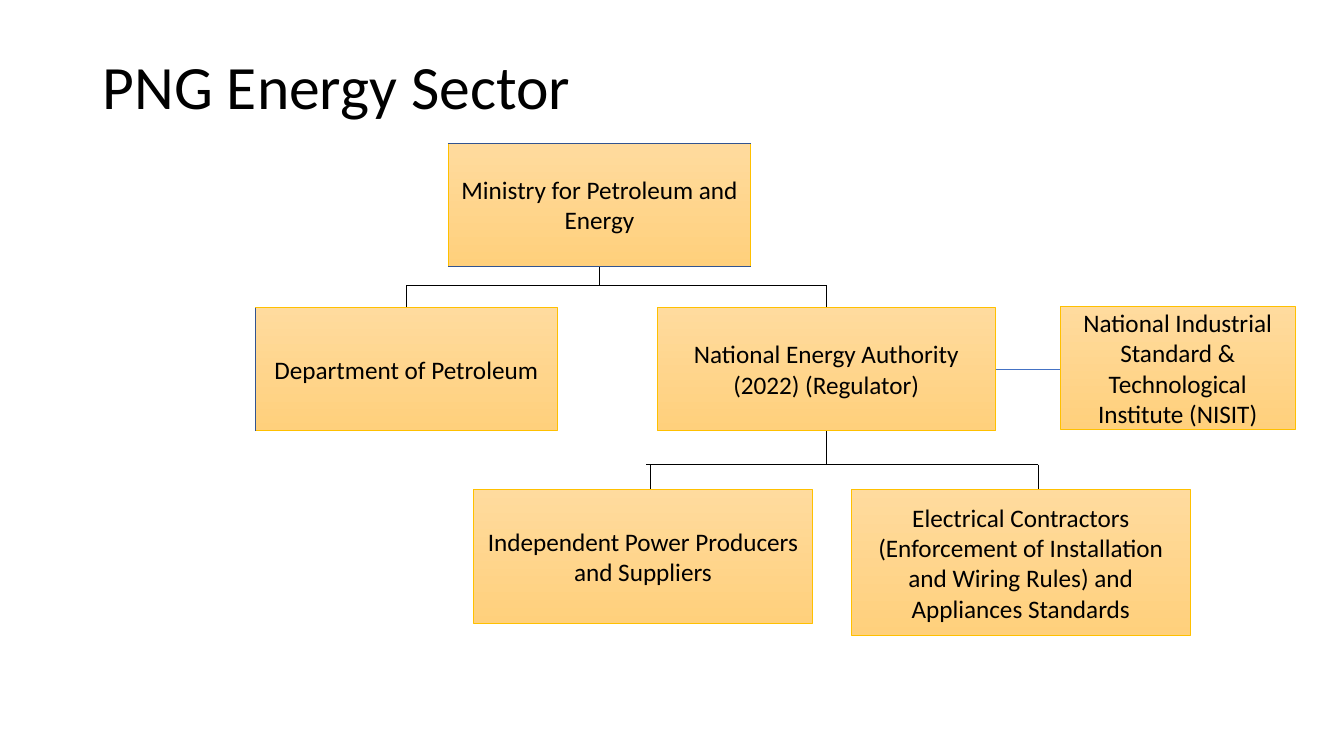
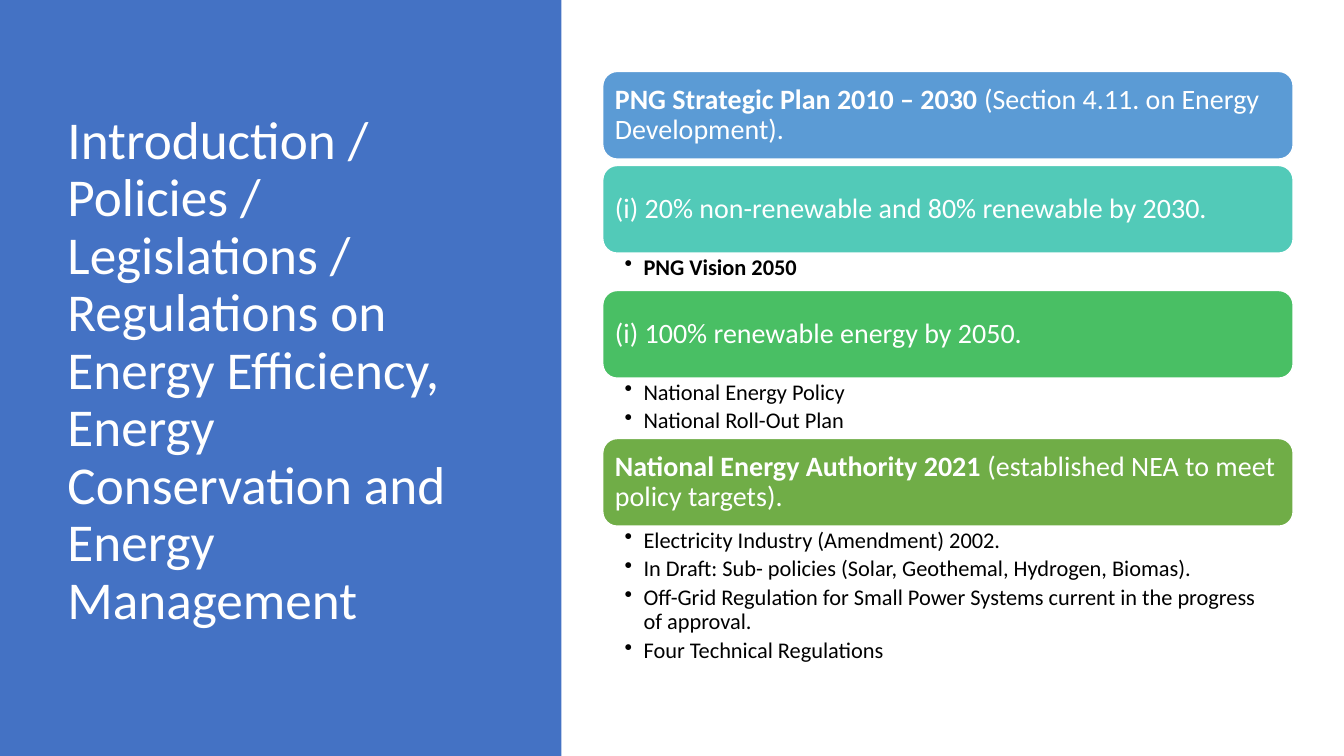
from lxml import etree
from pptx import Presentation
from pptx.dml.color import RGBColor
from pptx.enum.shapes import MSO_CONNECTOR, MSO_SHAPE
from pptx.enum.text import MSO_ANCHOR, PP_ALIGN
from pptx.oxml.ns import qn
from pptx.util import Cm, Pt

RECTANGLE, ROUNDED = MSO_SHAPE.RECTANGLE, MSO_SHAPE.ROUNDED_RECTANGLE
STRAIGHT = MSO_CONNECTOR.STRAIGHT
LEFT, CENTER = PP_ALIGN.LEFT, PP_ALIGN.CENTER
TOP, MIDDLE = MSO_ANCHOR.TOP, MSO_ANCHOR.MIDDLE

FONT = "Calibri"
BLACK, WHITE = "000000", "FFFFFF"
BLUE, DARK_BLUE, GOLD = "4472C4", "325491", "FFC000"
GOLD_FADE = ("FFDB9E", "FFD07C")

rgb = RGBColor.from_string


def write(shape, paragraphs, size, color, align=LEFT, anchor=MIDDLE, spacing=0.9):
    """Fill a shape with paragraphs, each a list of (text, bold) runs."""
    frame = shape.text_frame
    frame.word_wrap = True
    frame.vertical_anchor = anchor
    for index, spans in enumerate(paragraphs):
        para = frame.add_paragraph() if index else frame.paragraphs[0]
        para.alignment = align
        para.line_spacing = spacing
        for text, bold in spans:
            span = para.add_run()
            span.text = text
            span.font.name = FONT
            span.font.size = Pt(size)
            span.font.bold = bold
            span.font.color.rgb = rgb(color)
    return frame


def rule(page, x1, y1, x2, y2, color=BLACK, width=0.5):
    """Draw a straight line between two points given in centimetres."""
    line = page.shapes.add_connector(STRAIGHT, Cm(x1), Cm(y1), Cm(x2), Cm(y2))
    line.line.color.rgb = rgb(color)
    line.line.width = Pt(width)
    etree.SubElement(line._element.spPr, qn("a:effectLst"))


deck = Presentation()
deck.slide_width, deck.slide_height = Cm(33.87), Cm(19.05)
blank = deck.slide_layouts[6]

# Slide 1: organisation chart
page = deck.slides.add_slide(blank)
title = page.shapes.add_textbox(Cm(2.34), Cm(1.01), Cm(29.21), Cm(2.48))
write(title, [[("PNG Energy Sector", False)]], 44, BLACK)

# Connectors: top level to second level, then second level to third
for stem_x, top, bar_y, bottom, bar, drops in [
    (15.11, 6.71, 7.19, 7.75, (10.24, 20.83), (10.24, 20.83)),
    (20.83, 10.85, 11.71, 12.34, (16.28, 26.16), (16.38, 26.16)),
]:
    rule(page, stem_x, top, stem_x, bar_y)
    rule(page, bar[0], bar_y, bar[1], bar_y)
    for drop_x in drops:
        rule(page, drop_x, bar_y, drop_x, bottom)

organisations = [
    (11.3, 3.61, 7.62, 3.1, "Ministry for Petroleum and Energy"),
    (6.43, 7.75, 7.62, 3.1, "Department of Petroleum"),
    (16.56, 7.75, 8.53, 3.1, "National Energy Authority (2022) (Regulator)"),
    (26.72, 7.72, 5.92, 3.1,
     "National Industrial Standard & Technological Institute (NISIT)"),
    (11.94, 12.34, 8.53, 3.38, "Independent Power Producers and Suppliers"),
    (21.46, 12.34, 8.53, 3.68,
     "Electrical Contractors (Enforcement of Installation and Wiring Rules) "
     "and Appliances Standards"),
]
for left, top, width, height, name in organisations:
    box = page.shapes.add_shape(RECTANGLE, Cm(left), Cm(top), Cm(width), Cm(height))
    box.shadow.inherit = False
    box.fill.gradient()
    box.fill.gradient_angle = 270
    for stop, color in zip(box.fill.gradient_stops, GOLD_FADE):
        stop.color.rgb = rgb(color)
    box.line.color.rgb = rgb(GOLD)
    box.line.width = Pt(0.5)
    write(box, [[(name, False)]], 18, BLACK, CENTER, spacing=1.0)

# Blue edges of the Ministry and Department boxes, and the link to NISIT
for edge in [(11.3, 3.61, 18.92, 3.61), (11.3, 6.71, 18.92, 6.71),
             (6.43, 7.75, 6.43, 10.85)]:
    rule(page, *edge, color=DARK_BLUE, width=0.75)
rule(page, 25.09, 9.3, 26.72, 9.3, color=BLUE)

# Slide 2: policies
page = deck.slides.add_slide(blank)
panel = page.shapes.add_shape(RECTANGLE, 0, 0, Cm(14.15), deck.slide_height)
panel.shadow.inherit = False
panel.fill.solid()
panel.fill.fore_color.rgb = rgb(BLUE)
panel.line.fill.background()
title = page.shapes.add_textbox(Cm(1.45), Cm(1.73), Cm(10.57), Cm(15.29))
write(title, [[(
    "Introduction / Policies / Legislations / Regulations on Energy Efficiency, "
    "Energy Conservation and Energy Management", False)]], 38, WHITE)

BAND_LEFT, BAND_WIDTH, BAND_HEIGHT = 15.19, 17.4, 2.21
# Each band: colour, heading runs, space below it, bullets in that space
policies = [
    ("5B9BD5", [("PNG Strategic Plan 2010 – 2030 ", True),
                ("(Section 4.11. on Energy Development).", False)], 0.16, []),
    ("52CAB8", [("(i) 20% non-renewable and 80% renewable by 2030.", False)], 0.94,
     [[("PNG Vision 2050", True)]]),
    ("49BF64", [("(i) 100% renewable energy by 2050.", False)], 1.52,
     [[("National Energy Policy", False)], [("National Roll-Out Plan", False)]]),
    ("70AD47", [("National Energy Authority 2021 ", True),
                ("(established NEA to meet policy targets).", False)], 3.68,
     [[("Electricity Industry (Amendment) 2002.", False)],
      [("In Draft: Sub- policies (Solar, Geothemal, Hydrogen, Biomas).", False)],
      [("Off-Grid Regulation for Small Power Systems current in the progress "
        "of approval.", False)],
      [("Four Technical Regulations", False)]]),
]
top = 1.8
for color, heading, space, bullets in policies:
    band = page.shapes.add_shape(
        ROUNDED, Cm(BAND_LEFT), Cm(top), Cm(BAND_WIDTH), Cm(BAND_HEIGHT))
    band.shadow.inherit = False
    band.fill.solid()
    band.fill.fore_color.rgb = rgb(color)
    band.line.color.rgb = rgb(WHITE)
    band.line.width = Pt(1)
    frame = write(band, [heading], 20, WHITE)
    frame.margin_left = frame.margin_right = Cm(0.2)
    frame.margin_top = frame.margin_bottom = Cm(0.2)
    top += BAND_HEIGHT
    if bullets:
        box = page.shapes.add_textbox(
            Cm(BAND_LEFT), Cm(top), Cm(BAND_WIDTH), Cm(space))
        frame = write(box, bullets, 16, BLACK, anchor=TOP)
        frame.margin_left, frame.margin_right = Cm(0.55), Cm(0.4)
        frame.margin_top = frame.margin_bottom = Cm(0.07)
        for para in frame.paragraphs:
            para.space_after = Pt(3.2)
            properties = para._p.get_or_add_pPr()
            properties.set("marL", str(Cm(0.48)))
            properties.set("indent", str(-Cm(0.48)))
            etree.SubElement(properties, qn("a:buChar"), char="•")
    top += space

deck.save("out.pptx")
